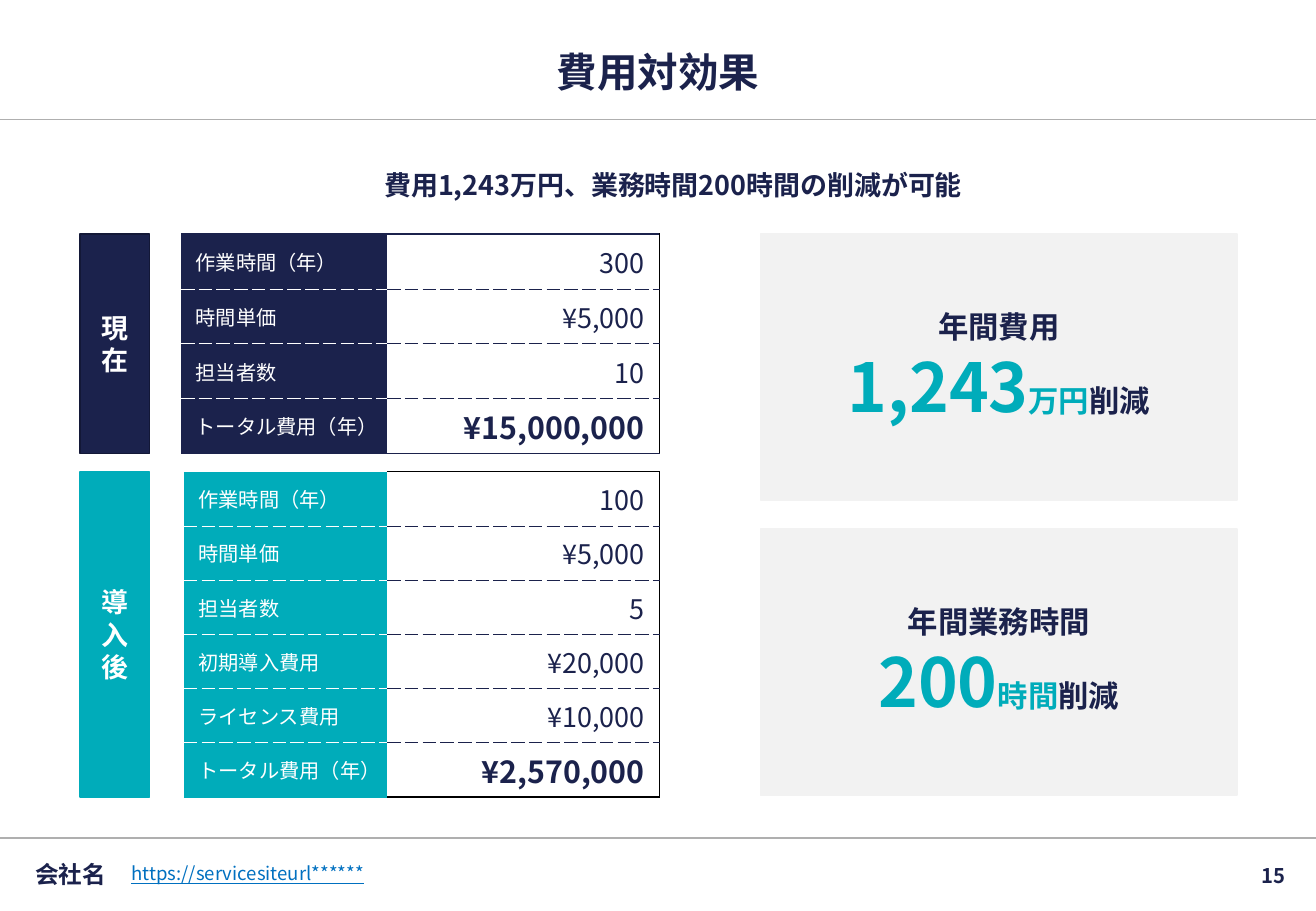
from lxml.etree import SubElement
from pptx import Presentation
from pptx.dml.color import RGBColor
from pptx.enum.shapes import MSO_CONNECTOR, MSO_SHAPE
from pptx.enum.text import MSO_ANCHOR, MSO_AUTO_SIZE, PP_ALIGN
from pptx.oxml.ns import qn
from pptx.util import Inches, Pt

FONT = "Noto Sans CJK JP"
TONES = {
    "navy": "1B224C",
    "edge": "131837",
    "teal": "00ACBA",
    "gray": "F2F2F2",
    "rule": "AFAFAF",
    "link": "0070C0",
    "white": "FFFFFF",
    "black": "000000",
}
PAGE = (0, 0, Inches(10.83), Inches(7.5))
NOW = [
    ("作業時間（年）", "300"),
    ("時間単価", "¥5,000"),
    ("担当者数", "10"),
    ("トータル費用（年）", "¥15,000,000"),
]
AFTER = [
    ("作業時間（年）", "100"),
    ("時間単価", "¥5,000"),
    ("担当者数", "5"),
    ("初期導入費用", "¥20,000"),
    ("ライセンス費用", "¥10,000"),
    ("トータル費用（年）", "¥2,570,000"),
]


def tint(name):
    return RGBColor.from_string(TONES[name])


def part(box, x, y, w, h):
    left, top, wide, high = box
    return (int(left + x * wide), int(top + y * high), int(w * wide), int(h * high))


def write(para, text, size, tone, bold=True, align=PP_ALIGN.CENTER):
    para.alignment = align
    font = para.font
    font.size, font.bold, font.name = Pt(size), bold, FONT
    font.color.rgb = tint(tone)
    props = para._p.pPr.find(qn("a:defRPr"))
    SubElement(props, qn("a:ea")).set("typeface", FONT)
    if text:
        para.add_run().text = text


def pad(frame, inset):
    frame.margin_left = frame.margin_right = Inches(inset)
    frame.margin_top = frame.margin_bottom = Inches(0.04)


def rule(slide, box, y):
    left, top, wide, _ = part(box, 0, y, 1, 0)
    line = slide.shapes.add_connector(MSO_CONNECTOR.STRAIGHT, left, top, left + wide, top)
    line.line.color.rgb = tint("rule")
    line.line.width = Pt(0.75)
    SubElement(line._element.spPr, qn("a:effectLst"))


def block(slide, box, fill, edge):
    shape = slide.shapes.add_shape(MSO_SHAPE.RECTANGLE, *box)
    shape.shadow.inherit = False
    shape.fill.solid()
    shape.fill.fore_color.rgb = tint(fill)
    shape.line.color.rgb = tint(edge)
    shape.line.width = Pt(1)
    frame = shape.text_frame
    frame.word_wrap = True
    frame.vertical_anchor = MSO_ANCHOR.MIDDLE
    return frame


def label(slide, box, text, size, tone, bold, align, inset=0.04):
    frame = slide.shapes.add_textbox(*box).text_frame
    frame.word_wrap = True
    frame.vertical_anchor = MSO_ANCHOR.MIDDLE
    pad(frame, inset)
    write(frame.paragraphs[0], text, size, tone, bold, align)
    return frame.paragraphs[0]


def place(holder, box):
    holder.left, holder.top, holder.width, holder.height = box
    frame = holder.text_frame
    frame.auto_size = MSO_AUTO_SIZE.NONE
    pad(frame, 0.04)
    return frame


def header(slide, box, title):
    frame = place(slide.shapes.title, part(box, 0.06, 0.4, 0.88, 0.4))
    frame.margin_top = Inches(0.08)
    frame.vertical_anchor = MSO_ANCHOR.MIDDLE
    para = frame.paragraphs[0]
    write(para, title, 24, "navy")
    para.line_spacing = 0.9
    rule(slide, box, 1)


def lead(slide, box, text):
    frame = place(slide.placeholders[1], box)
    frame.vertical_anchor = MSO_ANCHOR.TOP
    para = frame.paragraphs[0]
    write(para, text, 16, "navy")
    para.line_spacing = 1.3
    para.space_before = Pt(0)
    props = para._p.pPr
    props.set("marL", str(Inches(0.5)))
    props.set("indent", str(Inches(-0.25)))
    props.find(qn("a:defRPr")).addprevious(SubElement(props, qn("a:buNone")))


def border(cell, side, tone=None, width=0, dash="solid"):
    line = SubElement(cell._tc.get_or_add_tcPr(), qn("a:ln" + side))
    line.set("w", str(Pt(width)))
    if tone is None:
        SubElement(line, qn("a:noFill"))
        return
    fill = SubElement(line, qn("a:solidFill"))
    SubElement(fill, qn("a:srgbClr")).set("val", TONES[tone])
    SubElement(line, qn("a:prstDash")).set("val", dash)


def frame_cell(cell, first, last, inner, outer, right):
    border(cell, "L")
    border(cell, "R", *right)
    border(cell, "T", *(outer if first else inner))
    border(cell, "B", *(outer if last else inner))
    cell.vertical_anchor = MSO_ANCHOR.MIDDLE
    cell.margin_top = cell.margin_bottom = Inches(0.01)


def costs(slide, box, name, rows, tone, edge, start, outers):
    block_box = part(box, 0, 0, 0.12, 1)
    write(block(slide, block_box, tone, edge).paragraphs[0], name, 16, "white")
    split = 0.53
    area = part(box, start, 0, 1 - start, 1)
    table = slide.shapes.add_table(len(rows), 2, *area).table
    table.first_row = table.horz_banding = False
    for col, share in zip(table.columns, (split - start, 1 - split)):
        col.width = int(box[2] * share)
    for i, (key, value) in enumerate(rows):
        table.rows[i].height = area[3] // len(rows)
        first, last = i == 0, i == len(rows) - 1
        head, data = table.cell(i, 0), table.cell(i, 1)
        frame_cell(head, first, last, ("white", 0.5, "dash"), outers[0], ())
        frame_cell(data, first, last, ("navy", 0.5, "dash"), outers[1], ("black", 0.75))
        head.fill.solid()
        head.fill.fore_color.rgb = tint(tone)
        data.fill.background()
        head.margin_left = data.margin_right = Inches(0.12)
        head.margin_right = data.margin_left = Inches(0.02)
        write(head.text_frame.paragraphs[0], key, 12, "white", False, PP_ALIGN.LEFT)
        write(data.text_frame.paragraphs[0], value, 18 if last else 16, "navy", last, PP_ALIGN.RIGHT)


def card(slide, box, name, value, unit):
    frame = block(slide, box, "gray", "gray")
    write(frame.paragraphs[0], name, 18, "navy")
    para = frame.add_paragraph()
    write(para, "", 18, "navy")
    for text, size, tone in ((value, 40, "teal"), (unit, 18, "teal"), ("削減", 18, "navy")):
        run = para.add_run()
        run.text = text
        run.font.size = Pt(size)
        run.font.color.rgb = tint(tone)


def footer(slide, box, brand, link, page):
    rule(slide, box, 0)
    label(slide, part(box, 0.023, 0.17, 0.072, 0.65), brand, 14, "navy", True, PP_ALIGN.LEFT)
    para = label(slide, part(box, 0.096, 0.27, 0.53, 0.43), link, 11, "link", False, PP_ALIGN.LEFT)
    para.font.underline = True
    label(slide, part(box, 0.76, 0.18, 0.226, 0.65), page, 12, "navy", True, PP_ALIGN.RIGHT, 0.1)


def main():
    deck = Presentation()
    deck.slide_width, deck.slide_height = PAGE[2:]
    slide = deck.slides.add_slide(deck.slide_layouts[1])
    header(slide, part(PAGE, 0, 0, 1, 0.131), "費用対効果")
    lead(slide, part(PAGE, 0.06, 0.169, 0.88, 0.084), "費用1,243万円、業務時間200時間の削減が可能")
    costs(slide, part(PAGE, 0.061, 0.257, 0.44, 0.241), "現在", NOW, "navy", "edge",
          0.174, (("navy", 1), ("navy", 1)))
    costs(slide, part(PAGE, 0.061, 0.518, 0.44, 0.357), "導入後", AFTER, "teal", "teal",
          0.179, (("teal", 0.5), ("black", 0.75)))
    card(slide, part(PAGE, 0.578, 0.257, 0.362, 0.292), "年間費用", "1,243", "万円")
    card(slide, part(PAGE, 0.578, 0.581, 0.362, 0.292), "年間業務時間", "200", "時間")
    footer(slide, part(PAGE, 0, 0.92, 1, 0.08), "会社名", "https://servicesiteurl******", "15")
    deck.save("out.pptx")


if __name__ == "__main__":
    main()
